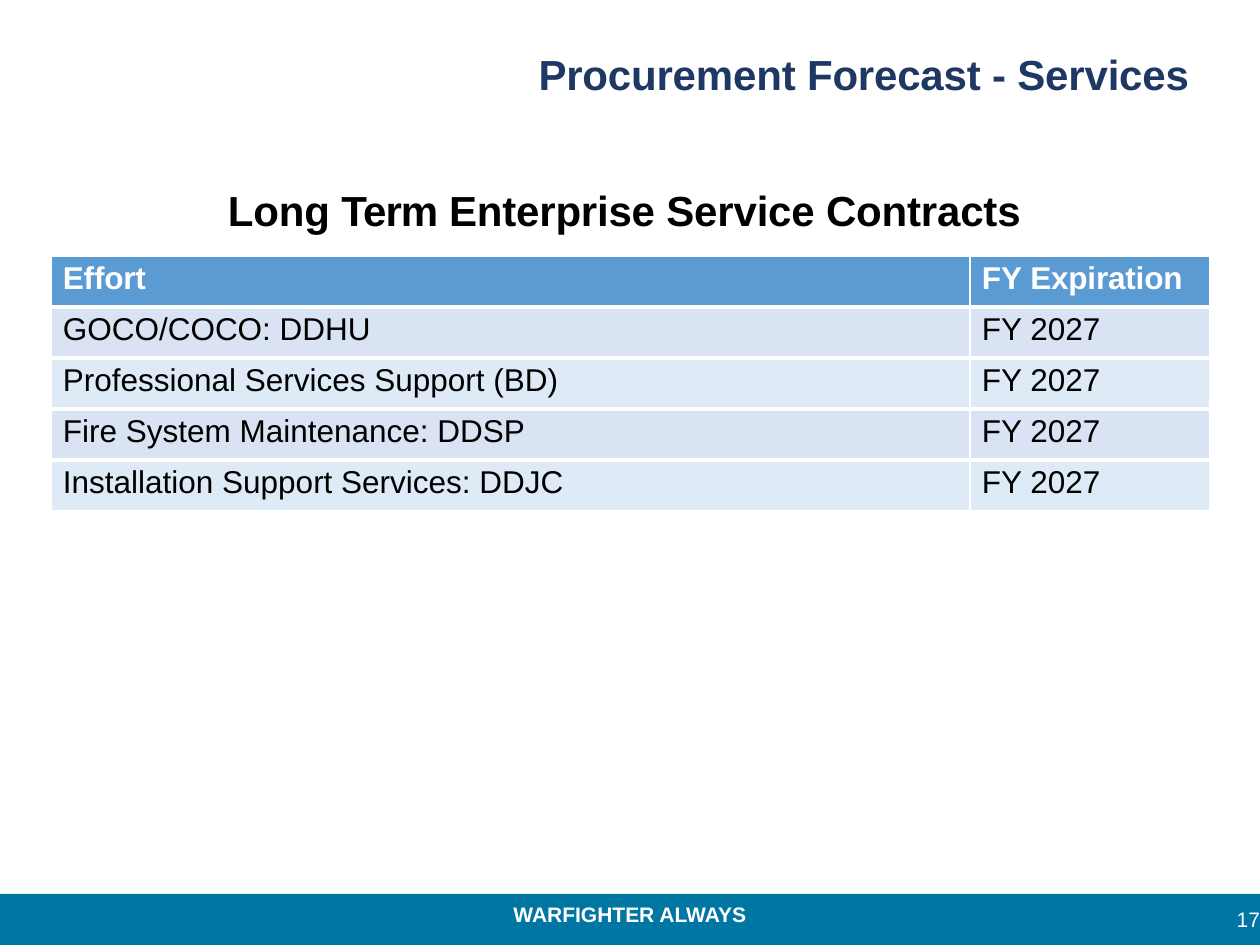
from lxml.etree import SubElement
from pptx import Presentation
from pptx.dml.color import RGBColor
from pptx.enum.shapes import MSO_SHAPE
from pptx.enum.text import MSO_ANCHOR, PP_ALIGN
from pptx.oxml.ns import qn
from pptx.util import Pt

EMU_PER_PX = 914400 / 126
WHITE, BLACK, NAVY, TEAL = "FFFFFF", "000000", "1F3863", "0076A3"
HEADER_FILL, BAND_FILLS = "5B9BD4", ("DAE3F3", "DEEBF7")
HEADER = [[("Effort", -10)], [("FY ", 0), ("Expiration", -10)]]
EFFORTS = [
    "GOCO/COCO: DDHU",
    "Professional Services Support (BD)",
    "Fire System Maintenance: DDSP",
    "Installation Support Services: DDJC",
]
EXPIRATION = "FY 2027"


def px(n):
    """Convert pixels to EMU."""
    return round(n * EMU_PER_PX)


def rgb(value):
    """Turn a hex string into a colour."""
    return RGBColor.from_string(value)


def set_attrs(obj, **values):
    """Set each given attribute on an object."""
    for name, value in values.items():
        setattr(obj, name, value)


def set_margins(obj, left=0, top=0, right=0, bottom=0):
    """Set the inner margins of a text frame or cell in pixels."""
    set_attrs(obj, margin_left=px(left), margin_top=px(top),
              margin_right=px(right), margin_bottom=px(bottom))


def write_runs(p, runs, size, color, bold):
    """Write pairs of text and letter spacing into a paragraph."""
    for text, spacing in runs:
        r = p.add_run()
        r.text = text
        set_attrs(r.font, name="Arial", size=Pt(size), bold=bold)
        r.font.color.rgb = rgb(color)
        if spacing:
            r._r.get_or_add_rPr().set("spc", str(spacing))


def add_text(s, box, runs, size, color, bold=True, align=PP_ALIGN.LEFT,
             anchor=MSO_ANCHOR.TOP, margins=(0, 1, 0, 0)):
    """Add a one-paragraph text box and return the paragraph."""
    tf = s.shapes.add_textbox(*map(px, box)).text_frame
    set_attrs(tf, word_wrap=True, vertical_anchor=anchor)
    set_margins(tf, *margins)
    p = tf.paragraphs[0]
    p.alignment = align
    write_runs(p, runs, size, color, bold)
    return p


def add_bar(s, box, fill):
    """Add a plain filled rectangle."""
    sp = s.shapes.add_shape(MSO_SHAPE.RECTANGLE, *map(px, box))
    sp.shadow.inherit = False
    sp.fill.solid()
    sp.fill.fore_color.rgb = rgb(fill)
    sp.line.fill.background()


def set_borders(cell, widths):
    """Give a cell white borders with widths in points for each side."""
    tc_pr = cell._tc.get_or_add_tcPr()
    for side, width in zip("LRTB", widths):
        ln = SubElement(tc_pr, qn(f"a:ln{side}"), w=str(Pt(width)))
        fill = SubElement(ln, qn("a:solidFill"))
        SubElement(fill, qn("a:srgbClr"), val=WHITE)


def add_contracts_table(s, left, top, col_widths, row_height):
    """Add the banded table of service contracts."""
    rows = HEADER, *([[(effort, 0)], [(EXPIRATION, 0)]] for effort in EFFORTS)
    last = len(rows) - 1
    table = s.shapes.add_table(
        len(rows), len(col_widths), px(left), px(top),
        px(sum(col_widths)), px(row_height * len(rows))).table
    for column, width in zip(table.columns, col_widths):
        column.width = px(width)
    for i, row in enumerate(rows):
        table.rows[i].height = px(row_height)
        fill = BAND_FILLS[(i - 1) % 2] if i else HEADER_FILL
        for j, runs in enumerate(row):
            cell = table.cell(i, j)
            set_margins(cell, left=12, top=5)
            set_borders(cell, (1, 1, 3 if i else 1, 3 if i < last else 1))
            cell.fill.solid()
            cell.fill.fore_color.rgb = rgb(fill)
            write_runs(cell.text_frame.paragraphs[0], runs, 18,
                       BLACK if i else WHITE, i == 0)


def add_footer(s):
    """Add the footer bar with its motto and page number."""
    add_bar(s, (0, 894, 1260, 51), TEAL)
    add_text(s, (0, 896, 1260, 38), [("WARFIGHTER ALWAYS", 0)], 12, WHITE,
             align=PP_ALIGN.CENTER, margins=(12, 6, 12, 6))
    p = add_text(s, (1197, 894, 63, 51), [("17", 0)], 12, WHITE, bold=False,
                 align=PP_ALIGN.RIGHT, anchor=MSO_ANCHOR.MIDDLE,
                 margins=(0, 0, 0, 0))
    p.line_spacing = Pt(14.2)


def main():
    """Build and save the slide."""
    prs = Presentation()
    set_attrs(prs, slide_width=px(1260), slide_height=px(945))
    s = prs.slides.add_slide(prs.slide_layouts[6])
    add_footer(s)
    add_text(s, (228, 184, 894, 54),
             [("Long ", -10), ("Term ", -50),
              ("Enterprise Service Contracts", -10)], 24, BLACK)
    add_contracts_table(s, 51, 256, (919, 240), 51)
    add_text(s, (452, 48, 823, 53), [("Procurement Forecast - Services", -10)],
             24, NAVY, align=PP_ALIGN.CENTER)
    prs.save("out.pptx")


if __name__ == "__main__":
    main()
